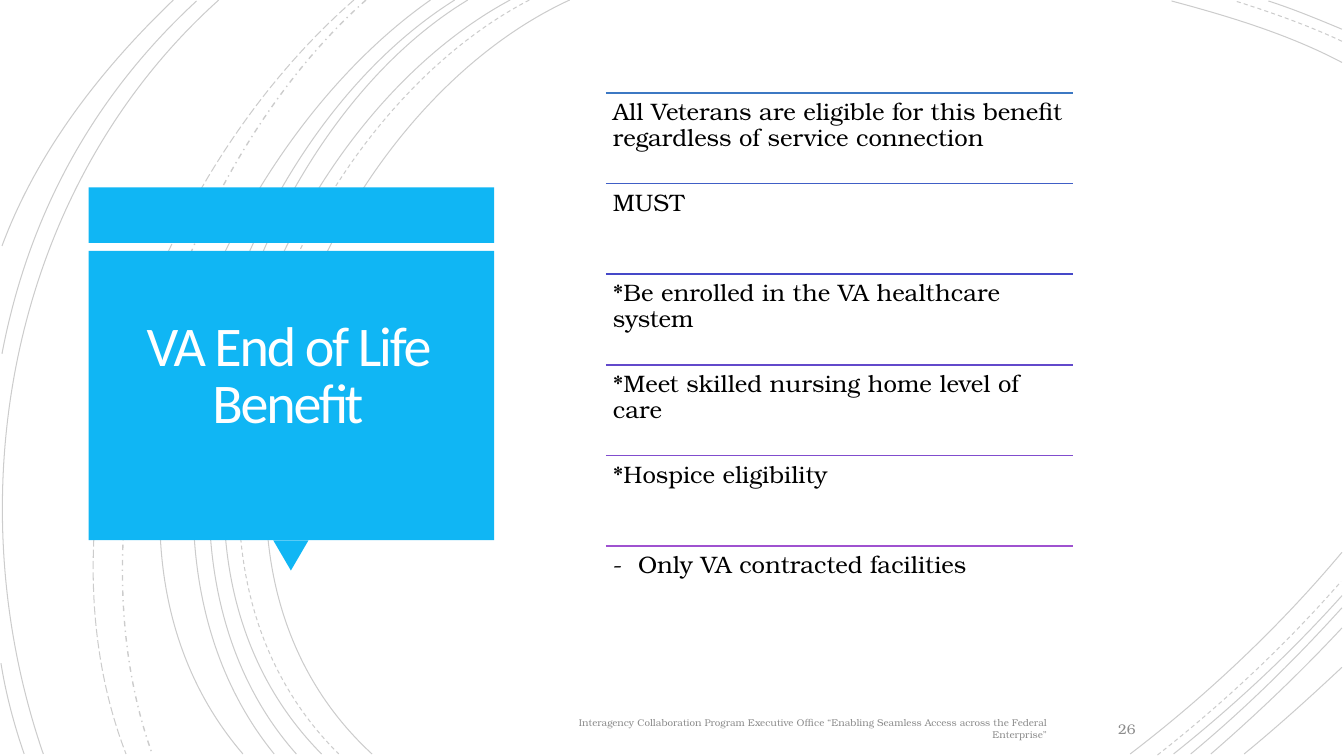
"""Build the slide on the VA end of life benefit."""
from dataclasses import dataclass
from typing import NamedTuple

from lxml.etree import SubElement
from pptx import Presentation
from pptx.dml.color import RGBColor
from pptx.enum.dml import MSO_LINE_DASH_STYLE as Dash
from pptx.enum.shapes import MSO_CONNECTOR as Connector, MSO_SHAPE as Preset
from pptx.enum.text import MSO_ANCHOR as Anchor, PP_ALIGN as Align
from pptx.oxml.ns import qn
from pptx.util import Inches, Length, Pt

BLACK = RGBColor(0, 0, 0)
WHITE = RGBColor(0xFF, 0xFF, 0xFF)
GREY = RGBColor(0x8C, 0x8C, 0x8C)
SKY = RGBColor(0x10, 0xB6, 0xF4)
TITLE_FONT, BODY_FONT = "Calibri", "TeX Gyre Bonum"
COLUMNS, ROWS = 13.33, 7.5
LIST_LEFT, LIST_TOP, LIST_WIDTH, LIST_STEP = 6.01, 0.92, 4.63, 0.9
HANG = 0.25
ARC_OPACITY = 20


class Point(NamedTuple):
    x: float
    y: float


class Area(NamedTuple):
    left: float
    top: float
    width: float
    height: float


@dataclass(frozen=True)
class Arc:
    start: Point
    bend_out: Point
    bend_in: Point
    end: Point
    dash: Dash = Dash.SOLID
    weight: float = 0.75


@dataclass(frozen=True)
class Panel:
    area: Area
    preset: Preset = Preset.RECTANGLE
    rotation: float = 0


@dataclass(frozen=True)
class Criterion:
    text: str
    rule: RGBColor
    hanging: bool = False


@dataclass(frozen=True)
class Style:
    size: float
    color: RGBColor
    font: str = BODY_FONT
    align: Align = Align.LEFT
    anchor: Anchor = Anchor.MIDDLE
    spacing: float = 1.0
    margins: tuple[float, float] = (0.1, 0.05)


def arc(*values: float, dash: Dash = Dash.SOLID, weight: float = 0.75) -> Arc:
    """Pair up eight coordinates into an arc."""
    return Arc(*map(Point, values[::2], values[1::2]), dash=dash, weight=weight)


ARCS = (
    arc(5.65, 0, 3.15, 1.15, 1.43, 5.4, 3.69, 7.48),
    arc(13.31, 0.62, 12.78, 0.34, 12.18, 0.16, 11.62, 0.01),
    arc(11.21, 7.48, 11.97, 6.9, 12.69, 6.22, 13.31, 5.48),
    arc(5.25, 0, 2.85, 1.25, 1.23, 5.37, 3.36, 7.48, dash=Dash.DASH),
    arc(13.31, 0.41, 12.97, 0.25, 12.6, 0.12, 12.25, 0.01, dash=Dash.DASH),
    arc(11.48, 7.49, 12.13, 6.98, 12.75, 6.4, 13.3, 5.77, dash=Dash.DASH),
    arc(5.06, 0, 2.7, 1.27, 1.1, 5.37, 3.19, 7.48),
    arc(13.31, 0.29, 13.07, 0.19, 12.83, 0.09, 12.58, 0.01),
    arc(11.64, 7.48, 12.23, 7.01, 12.8, 6.48, 13.31, 5.91),
    arc(4.64, 0, 2.44, 1.33, 1.1, 5.41, 2.94, 7.48),
    arc(11.81, 7.48, 12.34, 7.04, 12.84, 6.55, 13.31, 6.03),
    arc(4.51, 0, 2.31, 1.38, 0.97, 5.33, 2.72, 7.48),
    arc(12.01, 7.48, 12.46, 7.09, 12.9, 6.67, 13.31, 6.23),
    arc(4.27, 0, 2.17, 1.47, 0.53, 5.29, 2.41, 7.48),
    arc(12.34, 7.48, 12.67, 7.21, 12.99, 6.92, 13.31, 6.62),
    arc(3.63, 0, 1.76, 1.66, 0.65, 5.09, 1.51, 7.48, dash=Dash.DASH_DOT, weight=1),
    arc(3.51, 0, 1.57, 1.69, 0.29, 4.99, 1.25, 7.48, dash=Dash.LONG_DASH),
    arc(2.17, 0, 0.11, 1.85, -0.46, 4.9, 0.43, 7.48),
    arc(1.95, 0.01, 0.92, 0.96, 0.28, 2.14, 0.02, 3.51),
    arc(0.01, 6.58, 0.06, 6.89, 0.14, 7.19, 0.24, 7.48),
    arc(1.72, 0, 1, 0.69, 0.37, 1.5, 0.02, 2.44),
)
PANELS = (
    Panel(Area(0.88, 1.86, 4.02, 0.55)),
    Panel(Area(2.71, 5.36, 0.35, 0.3), Preset.ISOSCELES_TRIANGLE, 180),
    Panel(Area(0.88, 2.49, 4.02, 2.87)),
)
CRITERIA = (
    Criterion("All Veterans are eligible for this benefit regardless of service connection",
              RGBColor(0x3C, 0x78, 0xC3)),
    Criterion("MUST", RGBColor(0x40, 0x5F, 0xC6)),
    Criterion("*Be enrolled in the VA healthcare system", RGBColor(0x45, 0x48, 0xC8)),
    Criterion("*Meet skilled nursing home level of care", RGBColor(0x62, 0x49, 0xCB)),
    Criterion("*Hospice eligibility", RGBColor(0x81, 0x4D, 0xCE)),
    Criterion("-\tOnly VA contracted facilities", RGBColor(0x9F, 0x52, 0xD0), hanging=True),
)
TITLE = Style(40, WHITE, TITLE_FONT, Align.CENTER, spacing=0.85, margins=(0.25, 0.25))
BODY = Style(17, BLACK, anchor=Anchor.TOP, spacing=0.9, margins=(0.07, 0.07))
FOOTER = Style(7, GREY, align=Align.RIGHT)
NUMBER = Style(10, GREY, align=Align.RIGHT)


def grid(*cells: float) -> tuple[Length, ...]:
    """Turn columns and rows of one inch into lengths."""
    return tuple(Inches(cell) for cell in cells)


def draw_arc(shapes, curve: Arc) -> None:
    """Draw a faint background arc as one cubic curve."""
    builder = shapes.build_freeform(*grid(*curve.start))
    bends = [grid(*knot) for knot in (curve.bend_out, curve.bend_in, curve.end)]
    builder.add_line_segments(bends, close=False)
    stroke = builder.convert_to_shape()
    segments = list(stroke._element.iter(qn("a:lnTo")))
    cubic = SubElement(segments[0].getparent(), qn("a:cubicBezTo"))
    for segment in segments:
        cubic.append(segment[0])
        segment.getparent().remove(segment)
    stroke.shadow.inherit = False
    stroke.fill.background()
    stroke.line.color.rgb = BLACK
    stroke.line.width = Pt(curve.weight)
    stroke.line.dash_style = curve.dash
    ink = next(stroke._element.spPr.iter(qn("a:srgbClr")))
    SubElement(ink, qn("a:alpha"), val=str(ARC_OPACITY * 1000))


def draw_panel(shapes, panel: Panel) -> None:
    """Draw one part of the title callout."""
    block = shapes.add_shape(panel.preset, *grid(*panel.area))
    block.rotation = panel.rotation
    block.shadow.inherit = False
    block.fill.solid()
    block.fill.fore_color.rgb = SKY
    block.line.fill.background()


def draw_text(shapes, area: Area, text: str, style: Style):
    """Draw a wrapped text and return its paragraph."""
    frame = shapes.add_textbox(*grid(*area)).text_frame
    frame.word_wrap = True
    frame.vertical_anchor = style.anchor
    frame.margin_left = frame.margin_right = Inches(style.margins[0])
    frame.margin_top = frame.margin_bottom = Inches(style.margins[1])
    paragraph = frame.paragraphs[0]
    paragraph.text = text
    paragraph.alignment = style.align
    paragraph.line_spacing = style.spacing
    paragraph.font.size = Pt(style.size)
    paragraph.font.name = style.font
    paragraph.font.color.rgb = style.color
    return paragraph


def draw_criterion(shapes, index: int, criterion: Criterion) -> None:
    """Draw a coloured rule with its criterion below."""
    top = LIST_TOP + index * LIST_STEP
    rule = shapes.add_connector(Connector.STRAIGHT, *grid(LIST_LEFT, top, LIST_LEFT + LIST_WIDTH, top))
    rule.line.color.rgb = criterion.rule
    rule.line.width = Pt(1.25)
    SubElement(rule._element.spPr, qn("a:effectLst"))
    area = Area(LIST_LEFT, top, LIST_WIDTH, LIST_STEP)
    paragraph = draw_text(shapes, area, criterion.text, BODY)
    if criterion.hanging:
        properties = paragraph._p.get_or_add_pPr()
        properties.set("marL", str(Inches(HANG)))
        properties.set("indent", str(-Inches(HANG)))


def main() -> None:
    """Assemble and save the slide."""
    deck = Presentation()
    deck.slide_width, deck.slide_height = grid(COLUMNS, ROWS)
    shapes = deck.slides.add_slide(deck.slide_layouts[6]).shapes
    for curve in ARCS:
        draw_arc(shapes, curve)
    for panel in PANELS:
        draw_panel(shapes, panel)
    title = draw_text(shapes, Area(0.72, 0.7, 4.27, 6.09), "VA End of Life Benefit", TITLE)
    title.runs[0]._r.get_or_add_rPr().set("spc", "-150")
    for index, criterion in enumerate(CRITERIA):
        draw_criterion(shapes, index, criterion)
    draw_text(shapes, Area(5.64, 7.08, 4.84, 0.3),
              "Interagency Collaboration Program Executive Office “Enabling Seamless Access "
              "across the Federal Enterprise”", FOOTER)
    draw_text(shapes, Area(10.56, 7.08, 0.8, 0.3), "26", NUMBER)
    deck.save("out.pptx")


if __name__ == "__main__":
    main()
